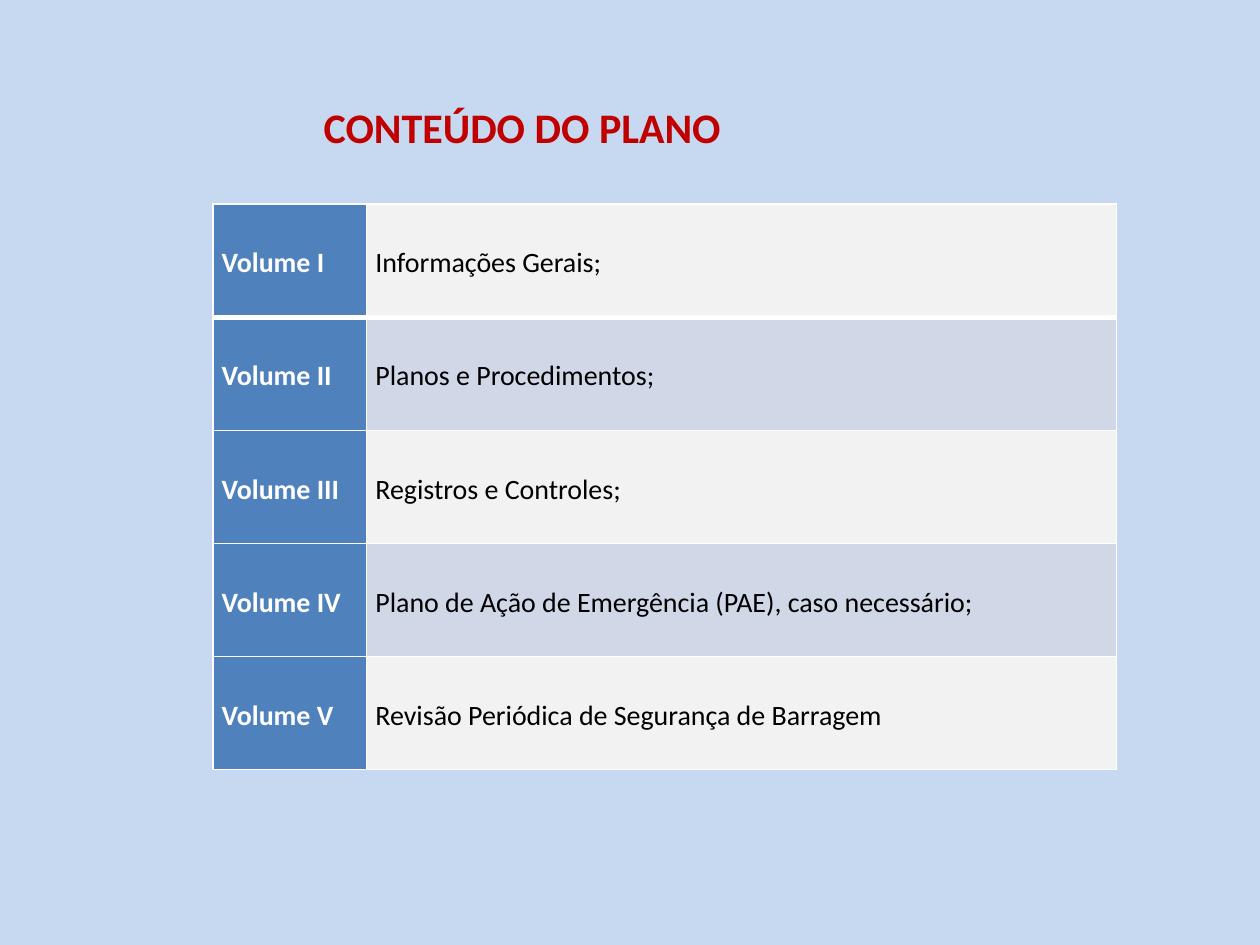
from lxml import etree
from pptx import Presentation
from pptx import util as u
from pptx.dml.color import RGBColor
from pptx.enum import text
from pptx.oxml import ns

BACK, RED, BLUE = "C6D9F1", "C00000", "4F81BD"
WHITE, BLACK = "FFFFFF", "000000"
BANDS = ("F2F2F2", "D0D8E8")
VOLUMES = [
    ("Volume I", "Informações Gerais;"),
    ("Volume II", "Planos e Procedimentos;"),
    ("Volume III", "Registros e Controles;"),
    ("Volume IV", "Plano de Ação de Emergência (PAE), caso necessário;"),
    ("Volume V", "Revisão Periódica de Segurança de Barragem"),
]


def paint(fill, tone):
    fill.solid()
    fill.fore_color.rgb = RGBColor.from_string(tone)


def write(frame, words, size=16, tone=BLACK, bold=False, align=None,
          lead=None, before=None, after=None):
    para = frame.paragraphs[0]
    para.alignment = align
    if lead:
        para.line_spacing = lead
        para.space_before = u.Pt(before)
        para.space_after = u.Pt(after)
    run = para.add_run()
    run.text = words
    font = run.font
    font.name, font.size, font.bold = "Calibri", u.Pt(size), bold
    font.color.rgb = RGBColor.from_string(tone)


def border(cell, side, width):
    props = cell._tc.get_or_add_tcPr()
    line = etree.SubElement(props, ns.qn("a:ln" + side), w=str(u.Pt(width)))
    solid = etree.SubElement(line, ns.qn("a:solidFill"))
    etree.SubElement(solid, ns.qn("a:srgbClr"), val=WHITE)


class Deck:
    def __init__(self):
        self.show = Presentation()
        self.show.slide_width = u.Inches(10)
        self.show.slide_height = u.Inches(7.5)
        self.slide = self.show.slides.add_slide(self.show.slide_layouts[6])
        paint(self.slide.background.fill, BACK)

    def title(self, words, *place):
        box = self.slide.shapes.add_textbox(*map(u.Inches, place))
        box.text_frame.word_wrap = True
        write(box.text_frame, words, size=24, tone=RED, bold=True,
              align=text.PP_ALIGN.CENTER)

    def table(self, rows, left, top, widths, height):
        grid = self.slide.shapes.add_table(
            len(rows), len(widths), u.Inches(left), u.Inches(top),
            u.Inches(sum(widths)), u.Inches(height)).table
        for col, width in zip(grid.columns, widths):
            col.width = u.Inches(width)
        for r, row in enumerate(rows):
            for c, words in enumerate(row):
                self.cell(grid.cell(r, c), words, r, c == 0,
                          r == len(rows) - 1)

    def cell(self, cell, words, row, head, last):
        cell.vertical_anchor = text.MSO_ANCHOR.MIDDLE
        cell.margin_left = cell.margin_right = u.Inches(0.07)
        cell.margin_top = cell.margin_bottom = 0
        # The first row is closed by a thicker rule
        for side in "LRTB":
            thick = (side == "B" and row == 0) or (side == "T" and row == 1)
            border(cell, side, 3 if thick else 1)
        paint(cell.fill, BLUE if head else BANDS[row % 2])
        write(cell.text_frame, words, tone=WHITE if head else BLACK,
              bold=head, lead=1.15, before=3,
              after=6 if last and not head else 3)


def main():
    deck = Deck()
    # Heading
    deck.title("CONTEÚDO DO PLANO", 1.86, 0.76, 4.57, 0.5)
    # Volumes of the plan
    deck.table(VOLUMES, 1.69, 1.62, (1.22, 5.95), 4.49)
    deck.show.save("out.pptx")


if __name__ == "__main__":
    main()
